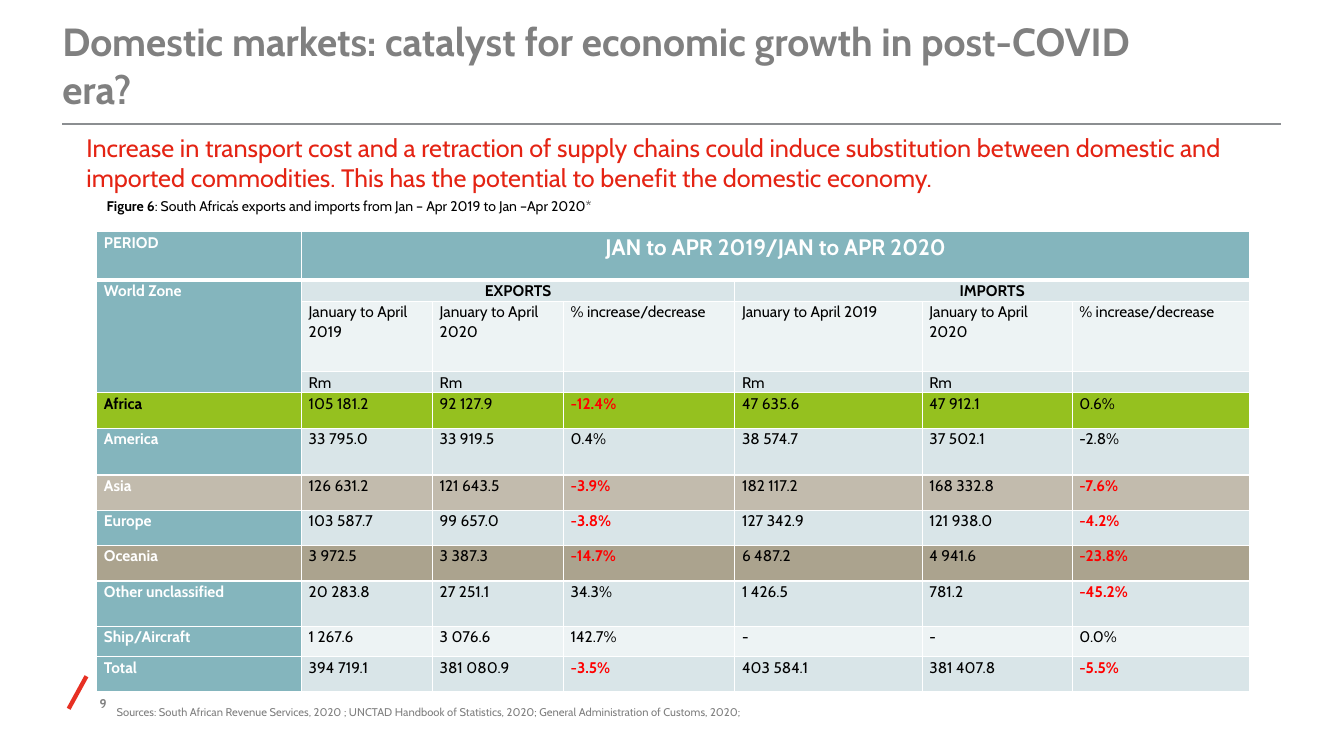
from dataclasses import dataclass

from lxml import etree
from pptx import Presentation
from pptx.dml.color import RGBColor
from pptx.enum.shapes import MSO_CONNECTOR
from pptx.enum.text import MSO_ANCHOR, MSO_AUTO_SIZE, PP_ALIGN
from pptx.oxml.ns import qn
from pptx.util import Cm, Pt

STRAIGHT = MSO_CONNECTOR.STRAIGHT
TOP, BOTTOM = MSO_ANCHOR.TOP, MSO_ANCHOR.BOTTOM
LEFT, CENTER, RIGHT = PP_ALIGN.LEFT, PP_ALIGN.CENTER, PP_ALIGN.RIGHT
NO_AUTOSIZE = MSO_AUTO_SIZE.NONE


@dataclass(frozen=True)
class Theme:
    font: str = "Cabin"
    white: str = "FFFFFF"
    black: str = "000000"
    grey: str = "808080"
    rule: str = "8B8E91"
    slash: str = "E73023"
    headline: str = "E42313"
    decline: str = "FF0000"
    teal: str = "84B5BD"
    pale: str = "D9E5E8"
    paler: str = "EDF3F4"
    green: str = "95C11F"
    sand: str = "C2BBAD"
    taupe: str = "ABA38E"
    title_size: float = 28
    headline_size: float = 18
    period_size: float = 16
    table_size: float = 11
    caption_size: float = 10
    number_size: float = 9
    source_size: float = 8


@dataclass(frozen=True)
class Box:
    left: float
    top: float
    width: float
    height: float

    def inner(self, left, top, width, height):
        return Box(self.left + left, self.top + top, width, height)

    def lengths(self):
        return Cm(self.left), Cm(self.top), Cm(self.width), Cm(self.height)


THEME = Theme()
PADDING = (0.25, 0.13, 0.25, 0.13)
CELL_PADDING = (0.18, 0, 0.18, 0)
HIGHLIGHT_BELOW = -3
COLUMN_WIDTHS = (5.16, 3.3, 3.3, 4.32, 4.72, 3.78, 4.47)
HEADER_HEIGHTS = (1.22, 0.53, 1.78, 0.53)
SUBHEADINGS = ("January to April 2019", "January to April 2020", "% increase/decrease")
UNITS = ("Rm", "Rm", "")
ZONES = (
    ("Africa", 0.89, THEME.green, THEME.green,
     ("105 181.2", "92 127.9", "-12.4%", "47 635.6", "47 912.1", "0.6%")),
    ("America", 1.18, THEME.teal, THEME.pale,
     ("33 795.0", "33 919.5", "0.4%", "38 574.7", "37 502.1", "-2.8%")),
    ("Asia", 0.89, THEME.sand, THEME.sand,
     ("126 631.2", "121 643.5", "-3.9%", "182 117.2", "168 332.8", "-7.6%")),
    ("Europe", 0.89, THEME.teal, THEME.pale,
     ("103 587.7", "99 657.0", "-3.8%", "127 342.9", "121 938.0", "-4.2%")),
    ("Oceania", 0.89, THEME.taupe, THEME.taupe,
     ("3 972.5", "3 387.3", "-14.7%", "6 487.2", "4 941.6", "-23.8%")),
    ("Other unclassified", 1.15, THEME.teal, THEME.pale,
     ("20 283.8", "27 251.1", "34.3%", "1 426.5", "781.2", "-45.2%")),
    ("Ship/Aircraft", 0.76, THEME.teal, THEME.paler,
     ("1 267.6", "3 076.6", "142.7%", "-", "-", "0.0%")),
    ("Total", 0.89, THEME.teal, THEME.pale,
     ("394 719.1", "381 080.9", "-3.5%", "403 584.1", "381 407.8", "-5.5%")),
)


def add_run(paragraph, text, size, color, bold=False):
    run = paragraph.add_run()
    run.text = text
    run.font.name = THEME.font
    run.font.size = Pt(size)
    run.font.bold = bold
    run.font.color.rgb = RGBColor.from_string(color)


def set_frame(frame, padding, anchor):
    frame.word_wrap = True
    frame.auto_size = NO_AUTOSIZE
    frame.vertical_anchor = anchor
    frame.margin_left, frame.margin_top, frame.margin_right, frame.margin_bottom = map(Cm, padding)


def add_text(slide, box, runs, padding=PADDING, anchor=TOP, align=LEFT, spacing=1.0):
    frame = slide.shapes.add_textbox(*box.lengths()).text_frame
    set_frame(frame, padding, anchor)
    paragraph = frame.paragraphs[0]
    paragraph.alignment = align
    paragraph.line_spacing = spacing
    for run in runs:
        add_run(paragraph, *run)


def add_line(slide, start, end, color, width):
    line = slide.shapes.add_connector(STRAIGHT, *map(Cm, start + end))
    line.line.color.rgb = RGBColor.from_string(color)
    line.line.width = Pt(width)
    etree.SubElement(line._element.spPr, qn("a:effectLst"))


def add_header(slide, box):
    title = slide.shapes.title
    title.left, title.top, title.width, title.height = box.inner(0, 0, 28.19, 1.83).lengths()
    set_frame(title.text_frame, (0, 0, 0, 0), BOTTOM)
    paragraph = title.text_frame.paragraphs[0]
    paragraph.alignment = LEFT
    add_run(paragraph, "Domestic markets: catalyst for economic growth in post-COVID era?",
            THEME.title_size, THEME.grey, True)
    bottom = box.top + box.height
    add_line(slide, (box.left, bottom), (box.left + box.width, bottom), THEME.rule, 1.65)


def add_message(slide, box):
    add_text(slide, box.inner(0, 0, box.width, 1.8), [
        ("Increase in transport cost and a retraction of supply chains could induce substitution "
         "between domestic and imported commodities. This has the potential to benefit the "
         "domestic economy.", THEME.headline_size, THEME.headline)])
    add_text(slide, box.inner(0.51, 1.65, 16.23, 0.71), [
        ("Figure 6", THEME.caption_size, THEME.black, True),
        (": South Africa’s exports and imports from Jan – Apr 2019 to Jan –Apr 2020*",
         THEME.caption_size, THEME.black)])


def set_border(cell, side, width):
    border = etree.SubElement(cell._tc.get_or_add_tcPr(), qn(f"a:ln{side}"), w=str(Pt(width)))
    fill = etree.SubElement(border, qn("a:solidFill"))
    etree.SubElement(fill, qn("a:srgbClr"), val=THEME.white)


def style_cell(cell, row, fill):
    for side in "LRTB":
        heavy = (row, side) in ((0, "B"), (1, "T"))
        set_border(cell, side, 3 if heavy else 1)
    cell.fill.solid()
    cell.fill.fore_color.rgb = RGBColor.from_string(fill)
    cell.margin_left, cell.margin_top, cell.margin_right, cell.margin_bottom = map(Cm, CELL_PADDING)
    cell.vertical_anchor = TOP
    end = cell.text_frame.paragraphs[0]._p.get_or_add_endParaRPr()
    end.set("sz", str(Pt(THEME.table_size).centipoints))


def write_cell(cell, text, color=THEME.black, bold=False, align=LEFT, size=THEME.table_size):
    if text:
        paragraph = cell.text_frame.paragraphs[0]
        paragraph.alignment = align
        paragraph.line_spacing = 1.07
        add_run(paragraph, text, size, color, bold)


def add_trade_table(slide, box):
    heights = HEADER_HEIGHTS + tuple(zone[1] for zone in ZONES)
    table = slide.shapes.add_table(len(heights), len(COLUMN_WIDTHS), *box.lengths()).table
    table.first_row = table.horz_banding = False
    for column, width in zip(table.columns, COLUMN_WIDTHS):
        column.width = Cm(width)
    for row, height in zip(table.rows, heights):
        row.height = Cm(height)

    fills = [(THEME.teal, fill) for fill in (THEME.teal, THEME.pale, THEME.paler, THEME.pale)]
    fills += [zone[2:4] for zone in ZONES]
    for row, (label_fill, value_fill) in enumerate(fills):
        for column in range(len(COLUMN_WIDTHS)):
            style_cell(table.cell(row, column), row, value_fill if column else label_fill)

    write_cell(table.cell(0, 0), "PERIOD", THEME.white, True)
    write_cell(table.cell(0, 1), "JAN to APR 2019/JAN to APR 2020",
               THEME.white, True, CENTER, THEME.period_size)
    write_cell(table.cell(1, 0), "World Zone", THEME.white, True)
    table.cell(0, 1).merge(table.cell(0, 6))
    table.cell(1, 0).merge(table.cell(3, 0))
    for first, flow in ((1, "EXPORTS"), (4, "IMPORTS")):
        write_cell(table.cell(1, first), flow, bold=True, align=CENTER)
        table.cell(1, first).merge(table.cell(1, first + 2))
        for offset, (subheading, unit) in enumerate(zip(SUBHEADINGS, UNITS)):
            write_cell(table.cell(2, first + offset), subheading)
            write_cell(table.cell(3, first + offset), unit)

    for row, (zone, _, label_fill, _, values) in enumerate(ZONES, len(HEADER_HEIGHTS)):
        label_color = THEME.black if label_fill == THEME.green else THEME.white
        write_cell(table.cell(row, 0), zone, label_color, True)
        for column, value in enumerate(values, 1):
            steep = value.endswith("%") and float(value[:-1]) < HIGHLIGHT_BELOW
            write_cell(table.cell(row, column), value,
                       THEME.decline if steep else THEME.black, steep)


def add_footer(slide, box):
    add_line(slide, (box.left + 0.49, box.top + 0.82), (box.left + 0.94, box.top),
             THEME.slash, 3.05)
    add_text(slide, box.inner(0, 0.44, 1.45, 0.58),
             [("9", THEME.number_size, THEME.grey, True)], (0, 0, 0, 0.13), BOTTOM, RIGHT)
    add_text(slide, box.inner(1.7, 0.71, 17.12, 0.33), [
        ("Sources: South African Revenue Services, 2020 ; UNCTAD Handbook of Statistics, 2020; "
         "General Administration of Customs, 2020;", THEME.source_size, THEME.grey)],
        (0, 0, 0, 0), spacing=1.04)


def main():
    presentation = Presentation()
    presentation.slide_width, presentation.slide_height = Cm(33.87), Cm(19.05)
    slide = presentation.slides.add_slide(presentation.slide_layouts[5])
    add_header(slide, Box(1.57, 0.99, 30.71, 2.13))
    add_message(slide, Box(1.93, 3.2, 30.33, 2.36))
    add_trade_table(slide, Box(2.44, 5.84, 29.05, 11.6))
    add_footer(slide, Box(1.24, 17.04, 18.82, 1.04))
    presentation.save("out.pptx")


if __name__ == "__main__":
    main()
